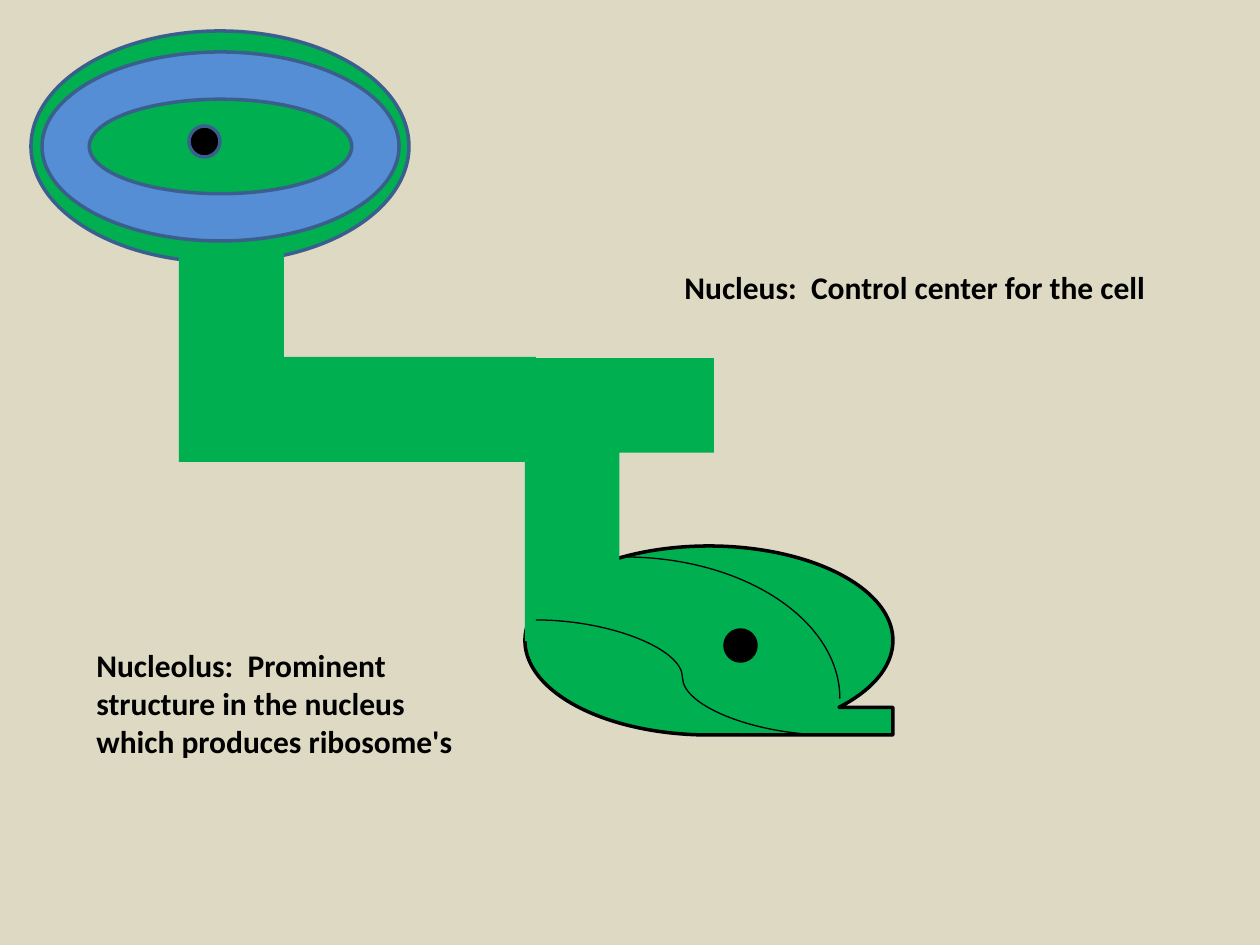
from lxml import etree
from pptx import Presentation
from pptx import util as u
from pptx.dml.color import RGBColor
from pptx.enum import shapes, text
from pptx.oxml.ns import qn

PX = u.Inches(1) / 126
COLORS = {"sand": "DDD9C3", "green": "00B050", "blue": "558ED5",
          "outline": "3A5F8C", "black": "000000"}
FONT, FONT_SIZE = "Calibri", 18
G = shapes.MSO_SHAPE

# preset, (left, top, width, height) in px, rotation, fill, line, line points; back to front
CELL_PARTS = [
    (G.OVAL, (31, 31, 378, 231), 0, "green", "outline", 2),
    (G.DONUT, (42, 52, 357, 189), 0, "blue", "outline", 2),
    (G.FLOWCHART_CONNECTOR, (189, 126, 31, 31), 0, "black", "outline", 2),
    (G.FLOWCHART_SEQUENTIAL_ACCESS_STORAGE, (525, 546, 368, 189), 0, "green", "black", 2),
    (G.CORNER, (179, 252, 357, 210), 0, "green", None, 0),
    (G.CORNER, (478, 405, 283, 189), 90, "green", None, 0),
    (G.FLOWCHART_CONNECTOR, (725, 630, 31, 31), 0, "black", "black", 2),
    (G.ARC, (410, 557, 430, 283), 0, None, "black", 0.75),
]
FOLD = (536, 620, 829, 735)  # start x, y and end x, y
LABELS = [
    ("Nucleus:  Control center for the cell", (672, 262, 536, 50)),
    ("Nucleolus:  Prominent structure in the nucleus which produces ribosome's",
     (84, 640, 399, 127)),
]


def emu(lengths):
    return [u.Emu(round(n * PX)) for n in lengths]


def rgb(name):
    return RGBColor.from_string(COLORS[name])


def paint(fmt, color):
    """Give a fill a solid colour, or none."""
    if color:
        fmt.solid()
        fmt.fore_color.rgb = rgb(color)
    else:
        fmt.background()


def add_part(s, preset, box, rotation, fill, line, points):
    sp = s.shapes.add_shape(preset, *emu(box))
    sp.shadow.inherit = False
    sp.rotation = rotation
    paint(sp.fill, fill)
    paint(sp.line.fill, line)
    if line:
        sp.line.width = u.Pt(points)


def add_fold(s, ends):
    """Add the curved line across the lower cell."""
    cx = s.shapes.add_connector(shapes.MSO_CONNECTOR.CURVE, *emu(ends))
    paint(cx.line.fill, "black")
    cx.line.width = u.Pt(0.75)
    etree.SubElement(cx._element.spPr, qn("a:effectLst"))


def add_label(s, words, box):
    tf = s.shapes.add_textbox(*emu(box)).text_frame
    tf.word_wrap = True
    tf.auto_size = text.MSO_AUTO_SIZE.SHAPE_TO_FIT_TEXT
    tf.text = words
    font = tf.paragraphs[0].runs[0].font
    font.name, font.size, font.bold = FONT, u.Pt(FONT_SIZE), True
    font.color.rgb = rgb("black")


def main():
    prs = Presentation()
    prs.slide_width, prs.slide_height = emu((1260, 945))
    s = prs.slides.add_slide(prs.slide_layouts[6])
    paint(s.background.fill, "sand")
    for part in CELL_PARTS:
        add_part(s, *part)
    add_fold(s, FOLD)
    for label in LABELS:
        add_label(s, *label)
    prs.save("out.pptx")


if __name__ == "__main__":
    main()
